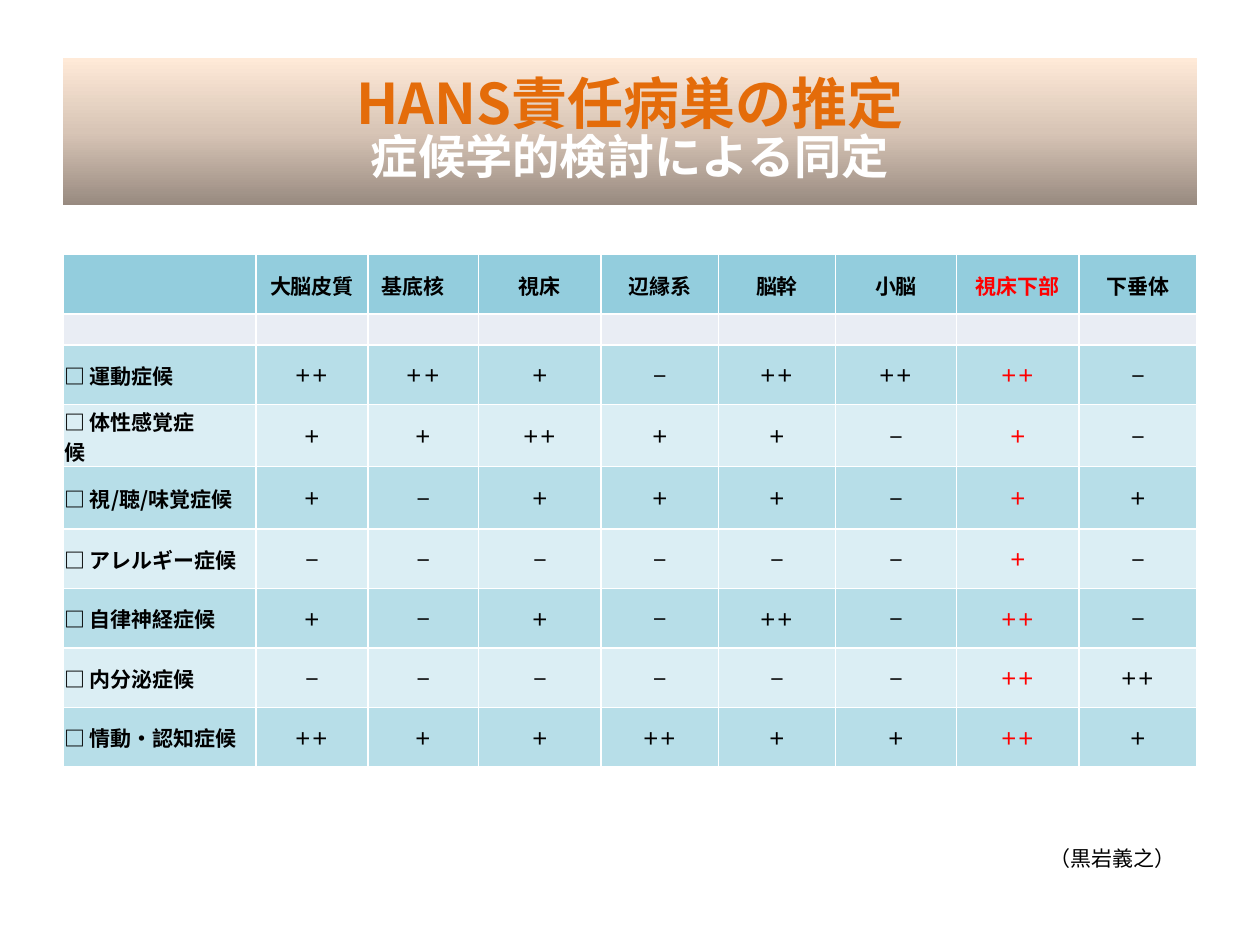
from copy import deepcopy

from lxml.etree import SubElement
from pptx import Presentation
from pptx.dml.color import RGBColor
from pptx.enum.text import MSO_ANCHOR, MSO_AUTO_SIZE, PP_ALIGN
from pptx.oxml.ns import qn
from pptx.util import Pt

# Content
TITLE = "HANS責任病巣の推定"
SUBTITLE = "症候学的検討による同定"
AUTHOR = "（黒岩義之）"
REGIONS = ["大脳皮質", "基底核　", "視床", "辺縁系", "脳幹", "小脳", "視床下部", "下垂体"]
SYMPTOMS = [
    ("□ 運動症候", ["＋＋", "＋＋", "＋", "―", "＋＋", "＋＋", "＋＋", "―"]),
    ("□ 体性感覚症候", ["＋", "＋", "＋＋", "＋", "＋", "―", "＋", "―"]),
    ("□ 視/聴/味覚症候", ["＋", "―", "＋", "＋", "＋", "―", "＋", "＋"]),
    ("□ アレルギー症候", ["―", "―", "―", "―", "―", "―", "＋", "―"]),
    ("□ 自律神経症候", ["＋", "―", "＋", "―", "＋＋", "―", "＋＋", "―"]),
    ("□ 内分泌症候", ["―", "―", "―", "―", "―", "―", "＋＋", "＋＋"]),
    ("□ 情動・認知症候", ["＋＋", "＋", "＋", "＋＋", "＋", "＋", "＋＋", "＋"]),
]
HIGHLIGHT_COLUMN = REGIONS.index("視床下部") + 1
TWO_LINE_LABEL = "□ 体性感覚症候"

# Theme
THEME = {
    "heading_font": "Noto Sans CJK JP", "mark_font": "Calibri",
    "title_size": 32, "subtitle_size": 27, "label_size": 12, "mark_size": 10,
    "title": "E46C0A", "subtitle": "FFFFFF", "text": "000000", "highlight": "FF0000",
    "border": "FFFFFF", "header": "93CDDD", "spacer": "E9EDF4",
    "bands": ["B7DEE8", "DBEEF4"],
    "gradient": [(0, "988A80"), (0.5, "D8C5B6"), (1, "FFEAD8")],
}

# Layout, in points
SLIDE = (720, 540)
TITLE_BOX = (36, 33.12, 648, 84.24)
TABLE_BOX = (36, 145.44, 648, 289.44)
AUTHOR_BOX = (592.56, 479.52, 96.48, 21.6)
COLUMN_WIDTHS = [110.4, 63.8, 63.4, 70, 67, 67, 69, 70.2, 67.2]
ROW_HEIGHT, SPACER_HEIGHT = 34, 17.7
CELL_FORMAT = {"margin_left": Pt(0.72), "margin_right": Pt(0.72), "margin_top": Pt(0.72),
               "margin_bottom": 0, "vertical_anchor": MSO_ANCHOR.MIDDLE}


def apply(target, values):
    for name, value in values.items():
        setattr(target, name, value)


def points(box):
    return [Pt(value) for value in box]


def add_span(para, text, size, color, bold=True, heading=True):
    span = para.add_run()
    span.text = text
    face = THEME["heading_font" if heading else "mark_font"]
    apply(span.font, {"name": face, "size": Pt(size), "bold": bold})
    span.font.color.rgb = RGBColor.from_string(color)
    if heading:
        SubElement(span.font._element, qn("a:ea"), typeface=face)


def fill_title(box):
    apply(box, dict(zip(("left", "top", "width", "height"), points(TITLE_BOX))))
    box.fill.gradient()
    box.fill.gradient_angle = 90
    stop_list = box.fill._xPr.find(qn("a:gradFill")).find(qn("a:gsLst"))
    stop_list.insert(1, deepcopy(stop_list[0]))
    for stop, (position, color) in zip(box.fill.gradient_stops, THEME["gradient"]):
        stop.position = position
        stop.color.rgb = RGBColor.from_string(color)
    apply(box.text_frame, {"vertical_anchor": MSO_ANCHOR.MIDDLE, "word_wrap": True,
                           "auto_size": MSO_AUTO_SIZE.NONE})
    para = box.text_frame.paragraphs[0]
    apply(para, {"alignment": PP_ALIGN.CENTER, "line_spacing": 0.85})
    add_span(para, TITLE, THEME["title_size"], THEME["title"])
    para.add_line_break()
    add_span(para, SUBTITLE, THEME["subtitle_size"], THEME["subtitle"])


def style_cell(cell, color):
    apply(cell, CELL_FORMAT)
    properties = cell._tc.get_or_add_tcPr()
    for side in ("lnL", "lnR", "lnT", "lnB"):
        line = SubElement(properties, qn(f"a:{side}"), w=str(Pt(1)))
        SubElement(SubElement(line, qn("a:solidFill")), qn("a:srgbClr"), val=THEME["border"])
    cell.fill.solid()
    cell.fill.fore_color.rgb = RGBColor.from_string(color)


def write_cell(cell, text, row, column):
    para = cell.text_frame.paragraphs[0]
    if not text:
        SubElement(para._p, qn("a:endParaRPr"), sz=str(THEME["mark_size"] * 100))
        return
    heading = row == 0 or column == 0
    para.alignment = PP_ALIGN.CENTER if column else PP_ALIGN.LEFT
    add_span(para, text, THEME["label_size" if heading else "mark_size"],
             THEME["highlight" if column == HIGHLIGHT_COLUMN else "text"], heading=heading)
    if text == TWO_LINE_LABEL:
        cell.margin_right = Pt(30)


def add_symptom_table(page):
    rows = [["", *REGIONS], [""] * (len(REGIONS) + 1)]
    rows += [[label, *marks] for label, marks in SYMPTOMS]
    colors = [THEME["header"], THEME["spacer"]]
    colors += [THEME["bands"][index % 2] for index in range(len(SYMPTOMS))]
    table = page.shapes.add_table(len(rows), len(rows[0]), *points(TABLE_BOX)).table
    apply(table, {"first_row": False, "horz_banding": False})
    for column, width in zip(table.columns, COLUMN_WIDTHS):
        column.width = Pt(width)
    for row, (texts, color) in enumerate(zip(rows, colors)):
        table.rows[row].height = Pt(SPACER_HEIGHT if row == 1 else ROW_HEIGHT)
        for column, text in enumerate(texts):
            cell = table.cell(row, column)
            style_cell(cell, color)
            write_cell(cell, text, row, column)


def main():
    deck = Presentation()
    deck.slide_width, deck.slide_height = points(SLIDE)
    page = deck.slides.add_slide(deck.slide_layouts[5])

    # Title band and symptom table
    fill_title(page.shapes.title)
    add_symptom_table(page)

    # Author
    box = page.shapes.add_textbox(*points(AUTHOR_BOX))
    apply(box.text_frame, {"word_wrap": False, "auto_size": MSO_AUTO_SIZE.SHAPE_TO_FIT_TEXT})
    add_span(box.text_frame.paragraphs[0], AUTHOR, THEME["label_size"], THEME["text"], bold=False)

    deck.save("out.pptx")


if __name__ == "__main__":
    main()
